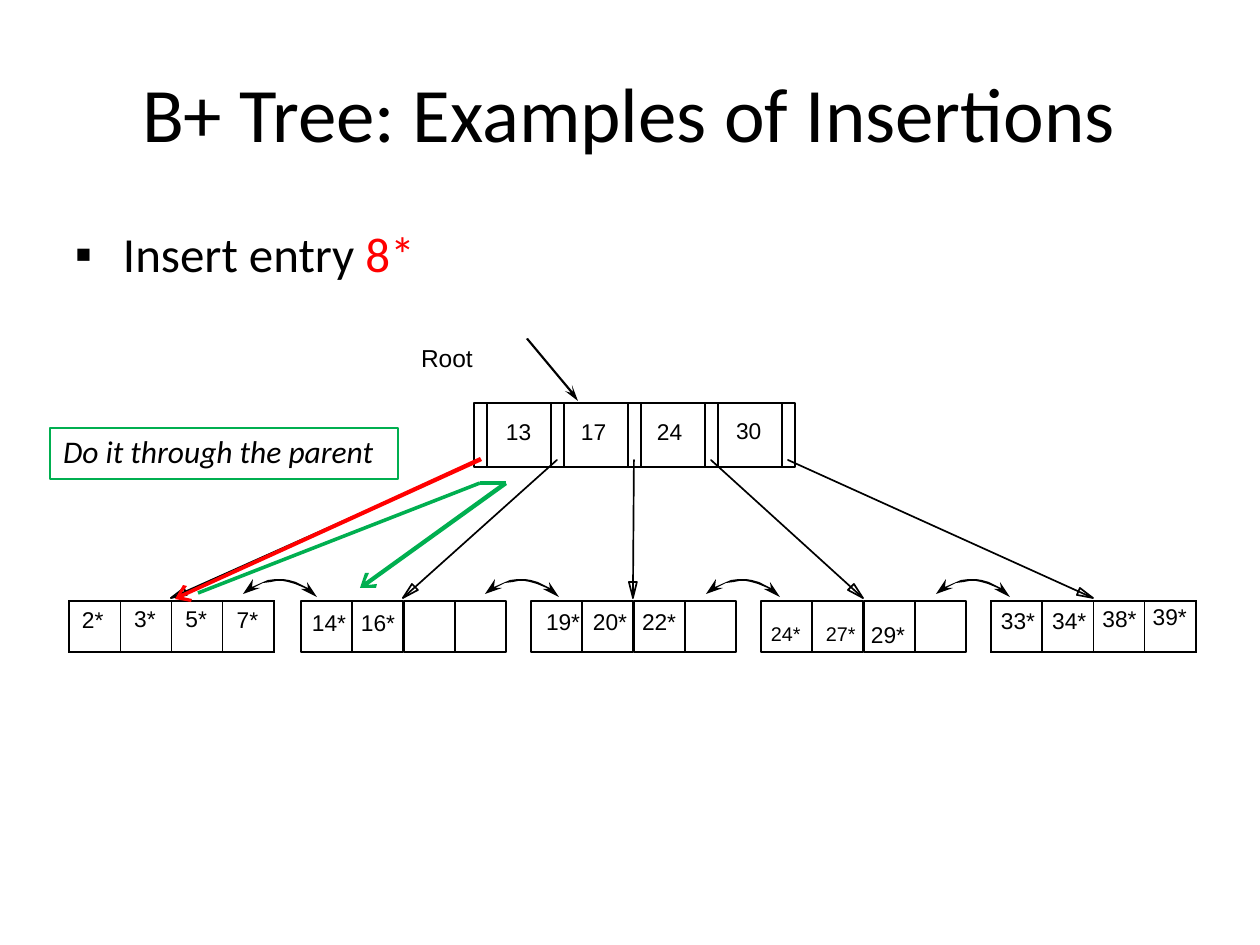
import math

import lxml.etree
import pptx
import pptx.dml.color
import pptx.enum.shapes
import pptx.enum.text
import pptx.oxml.ns
import pptx.util

PX = 914400 / 126
COLORS = {"ink": "000000", "new": "FF0000", "detour": "00AF50"}
LEAF_W, LEAF_H = 205, 51
SLOT_W, PITCH, ROOT_H = 13, 77, 64      # a root key with the pointer slot before it
BORDER = 0.96
# Two-headed arc between neighbouring leaves
SIBLING_ARC = [(74, 18), (64, 3), (65, 9), (53, 3), (46, 1), (40, 0), (33, 0), (25, 1),
               (18, 4), (9, 8), (10, 0), (0, 15), (17, 9), (10, 9), (20, 4), (28, 3),
               (33, 2), (40, 2), (45, 3), (52, 5), (64, 10), (58, 10)]
ROOT_ARROW = [(52, 63), (46, 47), (47, 54), (2, 0), (0, 1), (45, 55), (39, 53)]
qn = pptx.oxml.ns.qn


def emu(px):
    return pptx.util.Emu(round(px * PX))


def rgb(name):
    return pptx.dml.color.RGBColor.from_string(COLORS[name])


def sub(parent, tag, **attributes):
    return lxml.etree.SubElement(parent, qn(tag), attributes)


def write(frame, runs, size, font="Arial", left=0, top=1, hanging=0, italic=False):
    """Fill a text frame with one paragraph of (text, colour) runs."""
    frame.word_wrap = True
    frame.margin_left, frame.margin_top = emu(left), emu(top)
    frame.margin_right = frame.margin_bottom = 0
    frame.vertical_anchor = pptx.enum.text.MSO_ANCHOR.TOP
    line = frame.paragraphs[0]
    line.alignment = pptx.enum.text.PP_ALIGN.LEFT
    line.space_before = pptx.util.Pt(1)
    for words, color in runs:
        run = line.add_run()
        run.text = words
        run.font.size, run.font.name = pptx.util.Pt(size), font
        run.font.italic = italic
        run.font.color.rgb = rgb(color)
    if hanging:
        properties = line._p.get_or_add_pPr()
        properties.set("marL", str(emu(hanging)))
        properties.set("indent", str(-emu(hanging)))
        sub(properties, "a:buFont", typeface="Arial")
        sub(properties, "a:buChar", char="▪")
    return line


def textbox(slide, box, runs, size, **options):
    return write(slide.shapes.add_textbox(*map(emu, box)).text_frame, runs, size, **options)


def draw(slide, contours, line=None, width=BORDER, fill=None, close=True):
    """One freeform made of several contours."""
    builder = slide.shapes.build_freeform(*contours[0][0], scale=PX)
    for i, contour in enumerate(contours):
        if i:
            builder.move_to(*contour[0])
        builder.add_line_segments(contour[1:], close=close)
    outline = builder.convert_to_shape()
    outline.shadow.inherit = False
    if fill:
        outline.fill.solid()
        outline.fill.fore_color.rgb = rgb(fill)
    else:
        outline.fill.background()
    if line:
        outline.line.color.rgb = rgb(line)
        outline.line.width = pptx.util.Pt(width)
    else:
        outline.line.fill.background()


def rectangle(x, y, w, h):
    return [(x, y + h), (x, y), (x + w, y), (x + w, y + h)]


def shifted(points, x, y):
    return [(x + dx, y + dy) for dx, dy in points]


def back_from(tip, tail, points):
    """Turn (distance back from the tip, distance aside) into positions."""
    length = math.dist(tip, tail)
    ux, uy = (tail[0] - tip[0]) / length, (tail[1] - tip[1]) / length
    return [(tip[0] + back * ux - aside * uy, tip[1] + back * uy + aside * ux)
            for back, aside in points]


def bold_arrow(slide, tail, tip, color):
    """A solid shaft with an open, barbed head."""
    side = [(13, 9), (16, 7), (8, 2), (math.dist(tip, tail), 2)]
    mirrored = [(back, -aside) for back, aside in reversed(side)]
    draw(slide, [back_from(tip, tail, [(0, 0)] + side + mirrored)], fill=color)


def root_cells(x, y, keys):
    """Each key has a pointer slot before it; one more slot ends the node."""
    cells = []
    for i in range(keys):
        left = x + i * PITCH
        divider = left + SLOT_W
        cells += [rectangle(left, y, PITCH, ROOT_H), [(divider, y), (divider, y + ROOT_H)]]
    return cells + [rectangle(x + keys * PITCH, y, SLOT_W, ROOT_H)]


def leaf_cells(x, y):
    width = LEAF_W / 4
    return [rectangle(round(x + i * width), y, round(width), LEAF_H) for i in range(4)]


def pointer(tail, tip):
    """A thin line with a hollow head."""
    return [[tail, tip], back_from(tip, tail, [(0, 0), (16, 4), (16, -4)])]


def full_leaf(slide, x, y, entries):
    """A full leaf as a table; entries are (text, left, top)."""
    leaf = slide.shapes.add_table(1, len(entries), *map(emu, (x, y, LEAF_W, LEAF_H))).table
    leaf.first_row = leaf.horz_banding = False
    for cell, (entry, left, top) in zip(leaf.iter_cells(), entries):
        write(cell.text_frame, [(entry, "ink")], 13)
        cell.margin_left, cell.margin_top = emu(left), emu(top)
        cell.margin_right = cell.margin_bottom = 0
        properties = cell._tc.get_or_add_tcPr()
        for side in ("a:lnL", "a:lnR", "a:lnT", "a:lnB"):
            border = sub(properties, side, w=str(pptx.util.Pt(BORDER)))
            sub(sub(border, "a:solidFill"), "a:srgbClr", val=COLORS["ink"])
        cell.fill.background()


def leaf_entries(slide, x, y, width, entries, raised=0):
    """Entries of a leaf with free cells, as (text, offset); the first may be raised."""
    runs = [("\t" * (i > 0) + entry, "ink") for i, (entry, offset) in enumerate(entries)]
    line = textbox(slide, (x, y, width, 30), runs, 13)
    for run in line.runs[:raised]:
        run.font.size = pptx.util.Pt(19.5)
        run.font._element.set("baseline", "4000")
    stops = sub(line._p.get_or_add_pPr(), "a:tabLst")
    for entry, offset in entries[1:]:
        sub(stops, "a:tab", pos=str(emu(offset)), algn="l")


def tree(slide, x, y):
    root_x, leaf_y = x + 405, y + 198
    leaf_xs = [x, x + 232, x + 462, x + 692, x + 922]

    # Node cells and child pointers
    contours = root_cells(root_x, y, 4)
    for leaf_x in leaf_xs[1:4]:
        contours += leaf_cells(leaf_x, leaf_y)
    for i, leaf_x in enumerate(leaf_xs):
        contours += pointer((root_x + 6 + i * PITCH, y + 57), (leaf_x + 102, leaf_y - 3))
    draw(slide, contours, line="ink")

    # Root label and keys
    textbox(slide, (root_x - 54, y - 61, 56, 33), [("Root", "ink")], 14, left=1)
    for key, left, top in (("13", 31, 14), ("17", 106, 14), ("24", 182, 14), ("30", 261, 13)):
        textbox(slide, (root_x + left, y + top, 29, 30), [(key, "ink")], 13, left=1)

    # Leaf entries
    full_leaf(slide, leaf_xs[0], leaf_y,
              [("2*", 13, 7), ("3*", 14, 6), ("5*", 14, 6), ("7*", 14, 7)])
    leaf_entries(slide, leaf_xs[1] + 11, leaf_y + 7, 87, [("14*", 0), ("16*", 49)])
    leaf_entries(slide, leaf_xs[2] + 15, leaf_y + 6, 135,
                 [("19*", 0), ("20*", 47), ("22*", 96)])
    leaf_entries(slide, leaf_xs[3] + 10, leaf_y + 7, 139,
                 [("24*", 0), ("27*", 55), ("29*", 100)], raised=2)
    full_leaf(slide, leaf_xs[4], leaf_y,
              [("33*", 10, 8), ("34*", 10, 8), ("38*", 9, 6), ("39*", 8, 4)])

    # Sibling links and the arrow to the root
    links = [shifted(SIBLING_ARC, x + left, leaf_y - 22) for left in (174, 416, 637, 867)]
    draw(slide, links + [shifted(ROOT_ARROW, root_x + 52, y - 65)], fill="ink")

    # Search path of the new entry, then the detour to the sibling through the parent
    bold_arrow(slide, (root_x + 7, y + 56), (x + 106, leaf_y - 2), "new")
    bend, turn = (x + 411, y + 80), (x + 437, y + 80)
    draw(slide, [[(x + 129, y + 190), bend], [bend, turn]], "detour", 2.04, close=False)
    bold_arrow(slide, turn, (x + 291, y + 185), "detour")


def heading(slide, x, y):
    textbox(slide, (x, y, 1076, 113), [("B+ Tree: Examples of Insertions", "ink")],
            44, font="Calibri", left=50, top=19)


def task(slide, x, y):
    textbox(slide, (x, y, 343, 62), [("Insert entry ", "ink"), ("8*", "new")],
            28, font="Calibri", top=2, hanging=48)


def note(slide, x, y):
    frame = slide.shapes.add_shape(
        pptx.enum.shapes.MSO_SHAPE.RECTANGLE, *map(emu, (x, y, 348, 51)))
    frame.shadow.inherit = False
    frame.fill.background()
    frame.line.color.rgb = rgb("detour")
    frame.line.width = pptx.util.Pt(0.72)
    write(frame.text_frame, [("Do it through the parent", "ink")], 18, font="Calibri",
          left=13, top=4, italic=True)


def main():
    deck = pptx.Presentation()
    deck.slide_width, deck.slide_height = emu(1260), emu(945)
    slide = deck.slides.add_slide(deck.slide_layouts[6])
    heading(slide, 92, 47)
    task(slide, 75, 222)
    tree(slide, 69, 403)
    note(slide, 50, 428)
    deck.save("out.pptx")


if __name__ == "__main__":
    main()
